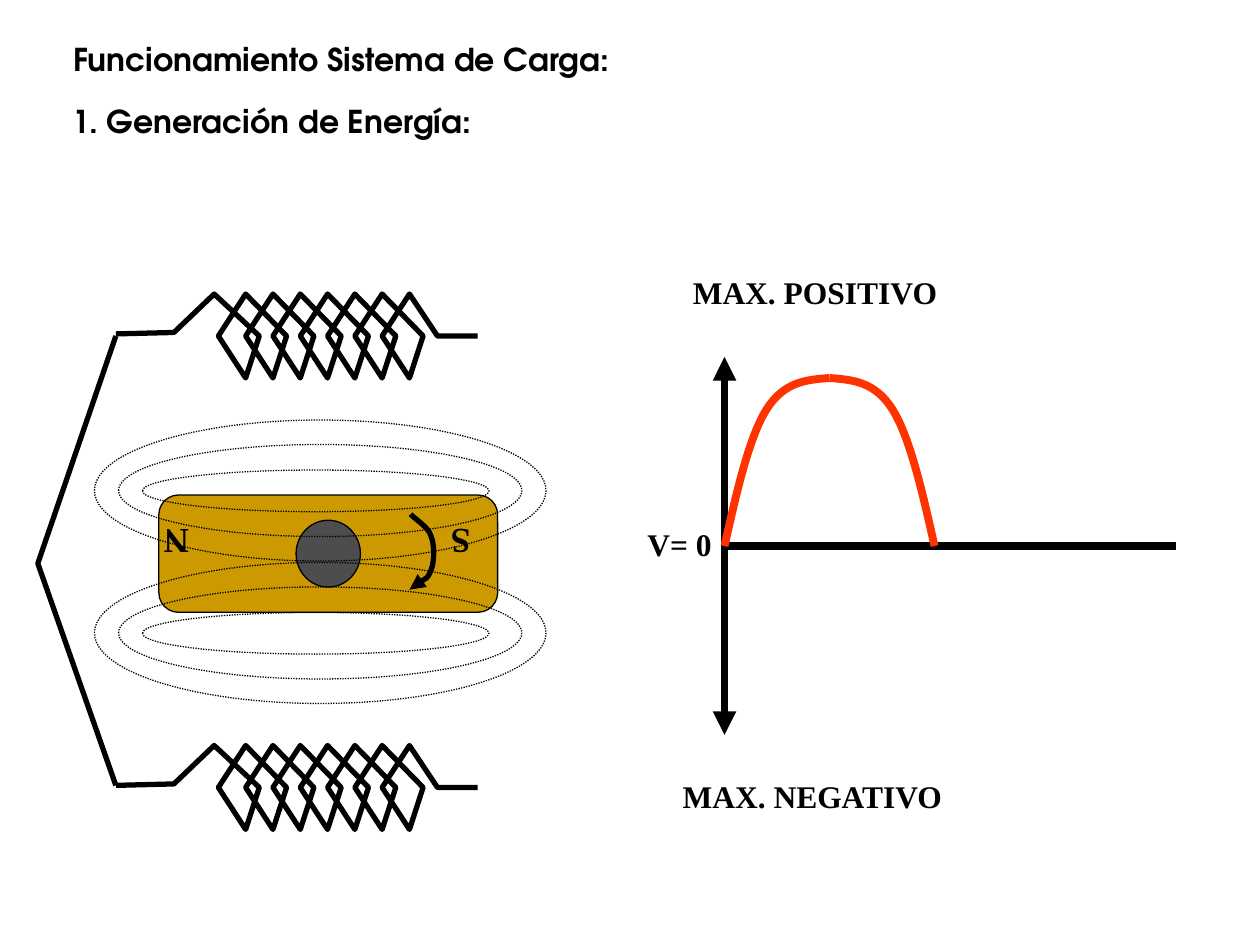
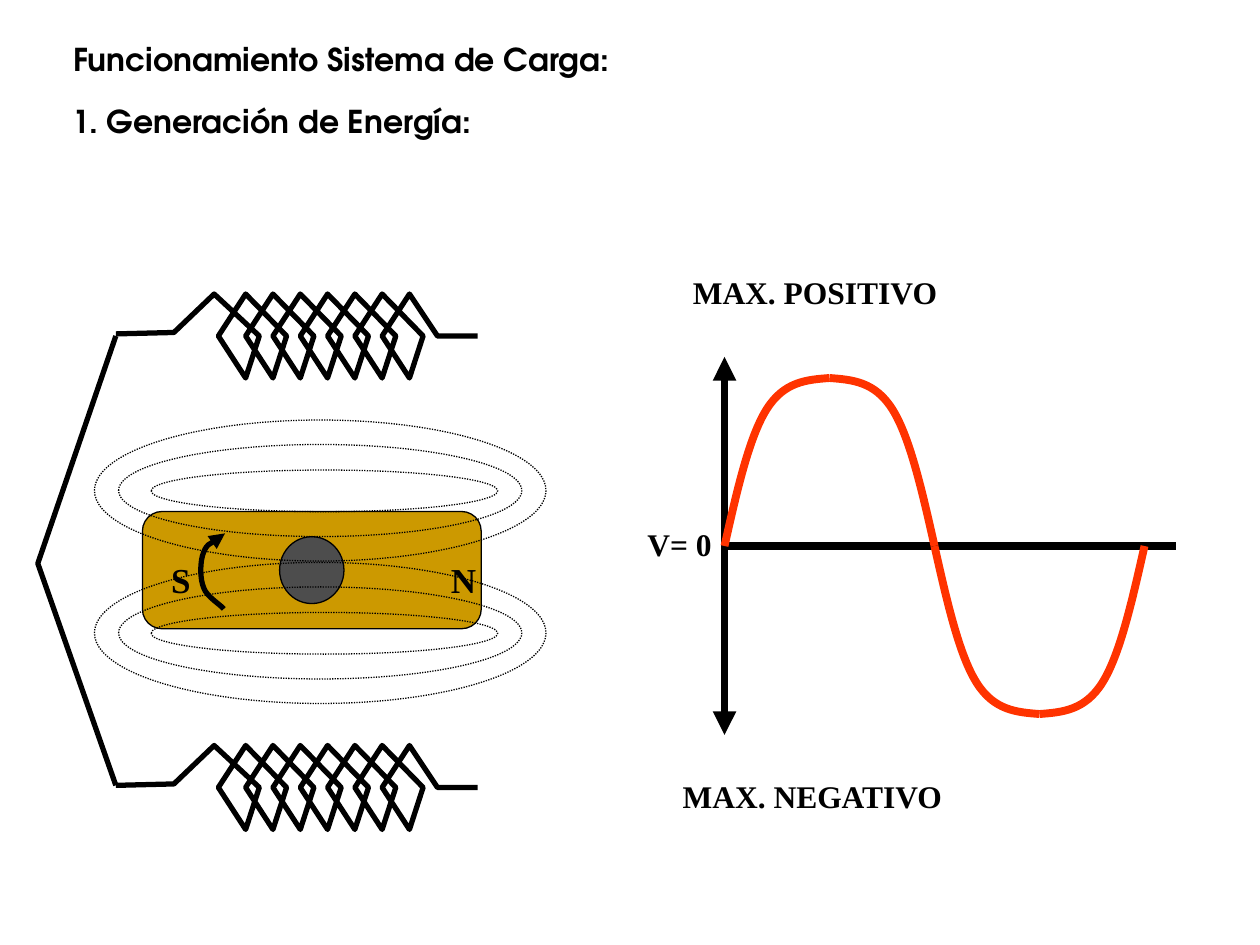
"""Build two slides on how a charging system generates energy."""
from pptx import Presentation
from pptx.dml.color import RGBColor
from pptx.enum.dml import MSO_LINE as Dash
from pptx.enum.shapes import MSO_CONNECTOR as Link, MSO_SHAPE as Kind
from pptx.enum.text import MSO_ANCHOR as Anchor, MSO_AUTO_SIZE as Fit, PP_ALIGN as Align
from pptx.oxml import parse_xml
from pptx.oxml.ns import nsdecls, qn
from pptx.util import Pt

HEAD = "Funcionamiento Sistema de Carga:"
SUB = "1. Generación de Energía:"
SANS, SERIF = "TeX Gyre Adventor", "Times New Roman"
BLACK, RED, GOLD, GRAY = "000000", "FF3300", "CC9900", "4D4D4D"

LABELS = [
    ("MAX. POSITIVO", (388.8, 152.6, 154.8, 28.8)),
    ("MAX. NEGATIVO", (383, 440.6, 164.2, 28.8)),
    ("V= 0", (362.9, 296.6, 51.1, 28.8)),
]
SLIDES = [
    {"magnet": (187.6, 316.4), "core": 81.4, "turn": 180, "arcs": 2,
     "poles": [("S", (249.8, 295.2, 26, 31)), ("N", (86.4, 295.2, 28.8, 31))]},
    {"magnet": (178.2, 325.8), "core": 86.4, "turn": 0, "arcs": 4,
     "poles": [("S", (90.7, 315.4, 26, 31)), ("N", (250.6, 315.4, 28.8, 31))]},
]
ORIGIN = (414, 312)
ARC = [(0, 0), (7, 31), (14, 62), (24, 78), (34, 94), (47, 95), (60, 96)]
SIDES = [(0, 1, -1), (120, -1, -1), (120, 1, 1), (240, -1, 1)]
RINGS = [(54, 240, 258, 80.6), (67.8, 254, 230.4, 52.6), (None, 268.6, 198, 23.8)]
RING_GAP = 81.4
SPIN = [(234.7, 293.8), (236.2, 296), (244.8, 301), (246.2, 306), (248.4, 311),
        (248.4, 321.1), (246.2, 326.2), (244.1, 331.2), (236.2, 334.8), (234, 337)]
PIVOT = (181.3, 320.9)
COILS = (192, 450)
WIRE = [(66.2, 192), (21.6, 322), (66.2, 448.8)]


def rgb(code):
    return RGBColor.from_string(code)


def pen(line, color, width):
    line.color.rgb = rgb(color)
    line.width = Pt(width)


def tip(line, *ends):
    for end in ends:
        line._get_or_add_ln().append(
            parse_xml(f'<a:{end} {nsdecls("a")} type="triangle"/>'))


def write(box, text, area, font, size, turn=0):
    box.left, box.top, box.width, box.height = map(Pt, area)
    box.rotation = turn
    frame = box.text_frame
    frame.text = text
    frame.word_wrap = False
    frame.auto_size = Fit.NONE
    frame.vertical_anchor = Anchor.TOP
    para = frame.paragraphs[0]
    para.alignment = Align.LEFT
    face = para.runs[0].font
    face.name, face.size, face.bold = font, Pt(size), True
    face.color.rgb = rgb(BLACK)


def label(slide, *args):
    write(slide.shapes.add_textbox(0, 0, 0, 0), *args)


def trace(slide, points, color, width, curved=False):
    """Draw an open outline; curved ones take points as cubic handles."""
    spots = [(Pt(x), Pt(y)) for x, y in points]
    maker = slide.shapes.build_freeform(*spots[0])
    maker.add_line_segments(spots[1:], close=False)
    shape = maker.convert_to_shape()
    shape.shadow.inherit = False
    shape.fill.background()
    pen(shape.line, color, width)
    if curved:
        steps = list(shape.element.iter(qn("a:lnTo")))
        for i in range(0, len(steps), 3):
            bend = parse_xml(f'<a:cubicBezTo {nsdecls("a")}/>')
            steps[i].addprevious(bend)
            for step in steps[i:i + 3]:
                bend.append(step[0])
                step.getparent().remove(step)
    return shape


def solid(slide, kind, area, fill=None):
    shape = slide.shapes.add_shape(kind, *map(Pt, area))
    shape.shadow.inherit = False
    pen(shape.line, BLACK, 0.75)
    if fill:
        shape.fill.solid()
        shape.fill.fore_color.rgb = rgb(fill)
    else:
        shape.fill.background()
        shape.line.dash_style = Dash.ROUND_DOT
    return shape


def axis(slide, *ends):
    link = slide.shapes.add_connector(Link.STRAIGHT, *map(Pt, ends))
    pen(link.line, BLACK, 4.5)
    link.element.spPr.append(parse_xml(f'<a:effectLst {nsdecls("a")}/>'))
    return link


def graph(slide, count):
    left, mid = ORIGIN
    axis(slide, left, mid, 672, mid)
    tip(axis(slide, left, mid - 108, left, mid + 108).line, "headEnd", "tailEnd")
    for dx, sx, sy in SIDES[:count]:
        arc = [(left + dx + sx * x, mid + sy * y) for x, y in ARC]
        trace(slide, arc, RED, 4.5, True)


def coil(slide, mid):
    points = [(273, mid), (250, mid)]
    for i in range(7):
        x = 234 - 15.6 * i
        points += [(x, mid - 24), (x - 15.6, mid), (x, mid + 24), (x + 7.8, mid)]
    points += [(122.4, mid - 24), (99.4, mid - 2), (66.2, mid - 1.2)]
    trace(slide, points, BLACK, 3)


def centred(spot, wide, high):
    return spot[0] - wide / 2, spot[1] - high / 2, wide, high


def rotor(slide, item):
    solid(slide, Kind.ROUNDED_RECTANGLE, centred(item["magnet"], 193.6, 67), GOLD)
    solid(slide, Kind.OVAL, centred(item["magnet"], 36.8, 38.2), GRAY)
    for text, area in item["poles"]:
        label(slide, text, area, SERIF, 20, item["turn"])
    for drop in (0, RING_GAP):
        for x, y, wide, high in RINGS:
            solid(slide, Kind.OVAL, (x or item["core"], y + drop, wide, high))
    spin = SPIN
    if not item["turn"]:
        spin = [(2 * PIVOT[0] - x, 2 * PIVOT[1] - y) for x, y in SPIN]
    tip(trace(slide, spin, BLACK, 3, True).line, "tailEnd")


def main():
    deck = Presentation()
    deck.slide_width, deck.slide_height = Pt(720), Pt(540)
    for item in SLIDES:
        slide = deck.slides.add_slide(deck.slide_layouts[5])
        write(slide.shapes.title, HEAD, (34.6, 19.4, 321.8, 28.8), SANS, 18)
        label(slide, SUB, (34.6, 54.7, 245.5, 28.8), SANS, 18)
        graph(slide, item["arcs"])
        for mid in COILS:
            coil(slide, mid)
        trace(slide, WIRE, BLACK, 3)
        rotor(slide, item)
        for text, area in LABELS:
            label(slide, text, area, SERIF, 18)
    deck.save("out.pptx")


if __name__ == "__main__":
    main()
